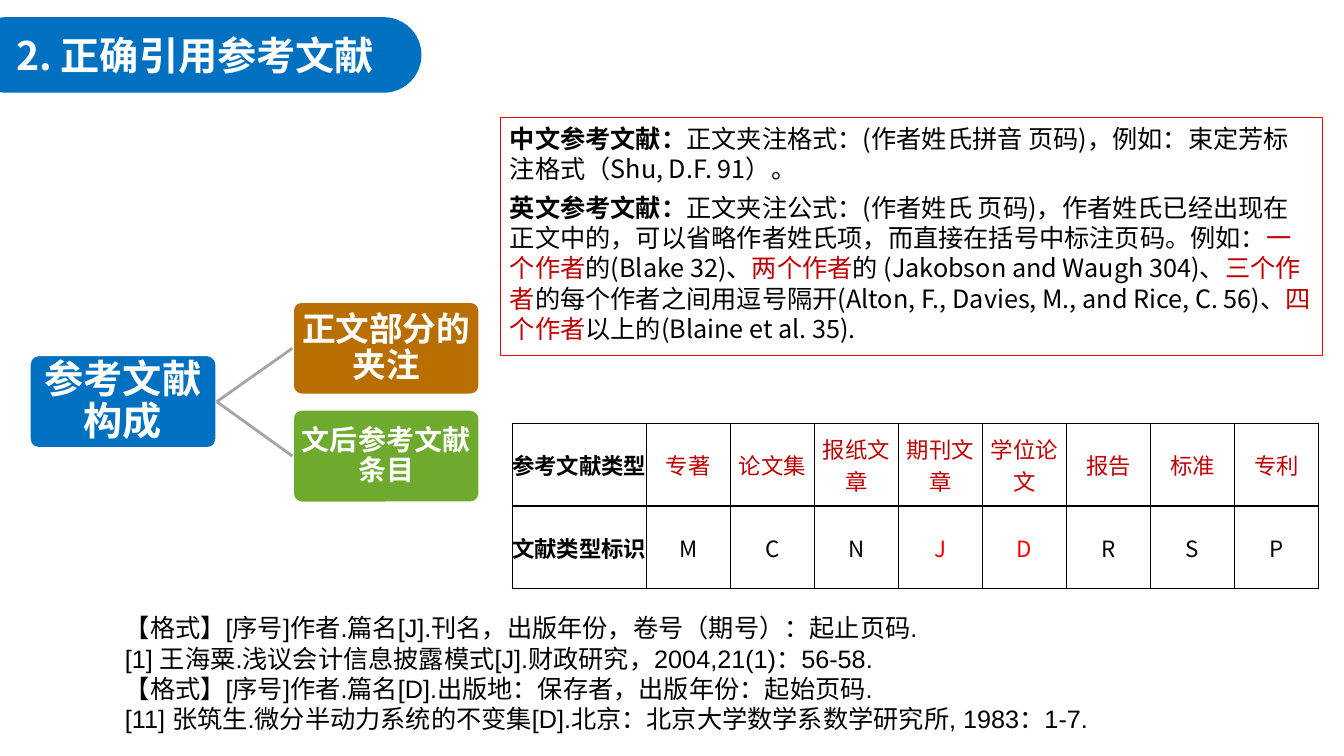
from lxml.etree import SubElement
from pptx import Presentation
from pptx.dml.color import RGBColor
from pptx.enum.shapes import MSO_CONNECTOR as CONN, MSO_SHAPE as SHAPE
from pptx.enum.text import MSO_ANCHOR as ANCHOR, PP_ALIGN as ALIGN
from pptx.oxml.ns import qn
from pptx.util import Pt

PX = 9144  # 100 px to the inch
FONT = "Noto Sans CJK SC"
C = {"blue": "0070C0", "brown": "B86E00", "green": "6EAA2E", "gray": "A5A5A5",
     "white": "FFFFFF", "black": "000000", "dark_red": "C00000",
     "red": "FF0000", "border": "080000"}


def px(*values):
    return [v * PX for v in values]


def rgb(name):
    return RGBColor.from_string(C[name])


def style(r, size, color="black", bold=False, font=FONT):
    r.font.size, r.font.bold, r.font.name = Pt(size), bold, font
    r.font.color.rgb = rgb(color)
    SubElement(r.font._element, qn("a:ea")).set("typeface", FONT)


def space(p, tag, percent):
    spacing = SubElement(p._p.get_or_add_pPr(), qn(tag))
    SubElement(spacing, qn("a:spcPct")).set("val", str(percent * 1000))


def set_margins(tf, x, y):
    tf.margin_left = tf.margin_right = x * PX
    tf.margin_top = tf.margin_bottom = y * PX


def add_box(s, kind, box, fill=None, line=None, width=2, radius=None):
    sp = s.shapes.add_shape(kind, *px(*box))
    sp.shadow.inherit = False
    if radius is not None:
        sp.adjustments[0] = radius
    if fill:
        sp.fill.solid()
        sp.fill.fore_color.rgb = rgb(fill)
    else:
        sp.fill.background()
    if line:
        sp.line.color.rgb = rgb(line)
        sp.line.width = Pt(width)
    else:
        sp.line.fill.background()
    sp.text_frame.word_wrap = True
    return sp


def add_label(sp, text, size):
    tf = sp.text_frame
    tf.text = text
    tf.vertical_anchor = ANCHOR.MIDDLE
    p = tf.paragraphs[0]
    p.alignment = ALIGN.CENTER
    style(p.runs[0], size, "white", True)


def add_title(s, box):
    sp = add_box(s, SHAPE.ROUNDED_RECTANGLE, box, "blue", radius=0.5)
    add_label(sp, "2. 正确引用参考文献", 28)


def add_tree(s, box):
    x, y, w, h = box
    node_w, node_h = 186, 93

    def add_node(left, top, text, size, fill):
        sp = add_box(s, SHAPE.ROUNDED_RECTANGLE, (left, top, node_w, node_h),
                     fill, "white", radius=0.1)
        set_margins(sp.text_frame, 4, 4)
        add_label(sp, text, size)
        space(sp.text_frame.paragraphs[0], "a:lnSpc", 90)
        return sp

    root = add_node(x, y + (h - node_h) // 2, "参考文献构成", 28, "blue")
    branches = [("正文部分的夹注", 24, "brown", y),
                ("文后参考文献条目", 20, "green", y + h - node_h)]
    for text, size, fill, top in branches:
        branch = add_node(x + w - node_w, top, text, size, fill)
        link = s.shapes.add_connector(CONN.STRAIGHT, 0, 0, 0, 0)
        link.begin_connect(root, 3)
        link.end_connect(branch, 1)
        link.line.color.rgb = rgb("gray")
        link.line.width = Pt(2)
        SubElement(link._element.spPr, qn("a:effectLst"))


def add_rules(s, box):
    # Each run is its text and kind: heading, plain or marked
    rules = [
        [("中文参考文献：", "heading"),
         ("正文夹注格式：(作者姓氏拼音 页码)，例如：束定芳标注格式（Shu, D.F. 91）。", "plain")],
        [("英文参考文献：", "heading"),
         ("正文夹注公式：(作者姓氏 页码)，作者姓氏已经出现在正文中的，"
          "可以省略作者姓氏项，而直接在括号中标注页码。例如：", "plain"),
         ("一个作者", "marked"), ("的(Blake 32)、", "plain"),
         ("两个作者", "marked"), ("的 (Jakobson and Waugh 304)、", "plain"),
         ("三个作者", "marked"),
         ("的每个作者之间用逗号隔开(Alton, F., Davies, M., and Rice, C. 56)、", "plain"),
         ("四个作者", "marked"), ("以上的(Blaine et al. 35).", "plain")],
    ]
    tf = add_box(s, SHAPE.RECTANGLE, box, line="red", width=0.75).text_frame
    tf.vertical_anchor = ANCHOR.TOP
    for i, runs in enumerate(rules):
        p = tf.paragraphs[0] if i == 0 else tf.add_paragraph()
        p.alignment = ALIGN.LEFT
        space(p, "a:spcAft", 35)
        for text, kind in runs:
            r = p.add_run()
            r.text = text
            style(r, 18, "dark_red" if kind == "marked" else "black", kind == "heading")


def add_borders(cell):
    tc_pr = cell._tc.get_or_add_tcPr()
    for i, side in enumerate(("a:lnL", "a:lnR", "a:lnT", "a:lnB")):
        ln = tc_pr.makeelement(qn(side), {"w": str(Pt(1))})
        fill = SubElement(ln, qn("a:solidFill"))
        SubElement(fill, qn("a:srgbClr")).set("val", C["border"])
        tc_pr.insert(i, ln)


def add_type_table(s, box):
    types = [("参考文献类型", "文献类型标识"), ("专著", "M"), ("论文集", "C"),
             ("报纸文章", "N"), ("期刊文章", "J"), ("学位论文", "D"),
             ("报告", "R"), ("标准", "S"), ("专利", "P")]
    x, y, w, h = box
    head_w = 133
    table = s.shapes.add_table(2, len(types), *px(x, y, w, h)).table
    table.first_row = table.horz_banding = False
    for row in table.rows:
        row.height = h * PX // 2
    for i, pair in enumerate(types):
        table.columns[i].width = head_w * PX if i == 0 else (w - head_w) * PX // (len(types) - 1)
        for j, text in enumerate(pair):
            cell = table.cell(j, i)
            cell.text = text
            cell.fill.background()
            cell.vertical_anchor = ANCHOR.MIDDLE
            set_margins(cell, 0, 0)
            add_borders(cell)
            p = cell.text_frame.paragraphs[0]
            p.alignment = ALIGN.CENTER
            color = "black"
            if i > 0 and j == 0:
                color = "dark_red"
            elif text in ("J", "D"):
                color = "red"
            style(p.runs[0], 16, color, i == 0)


def add_formats(s, box):
    tf = s.shapes.add_textbox(*px(*box)).text_frame
    tf.word_wrap = True
    tf.text = "\n".join([
        "【格式】[序号]作者.篇名[J].刊名，出版年份，卷号（期号）：起止页码.",
        "[1] 王海粟.浅议会计信息披露模式[J].财政研究，2004,21(1)：56-58.",
        "【格式】[序号]作者.篇名[D].出版地：保存者，出版年份：起始页码.",
        "[11] 张筑生.微分半动力系统的不变集[D].北京：北京大学数学系数学研究所, 1983：1-7.",
    ])
    for p in tf.paragraphs:
        style(p.runs[0], 18, font="Arial")


def main():
    prs = Presentation()
    prs.slide_width, prs.slide_height = px(1333, 750)
    s = prs.slides.add_slide(prs.slide_layouts[6])
    add_tree(s, (29, 299, 447, 200))
    add_title(s, (-31, 17, 449, 75))
    add_type_table(s, (508, 420, 800, 164))
    add_rules(s, (496, 117, 816, 236))
    add_formats(s, (114, 603, 1168, 131))
    prs.save("out.pptx")


if __name__ == "__main__":
    main()
